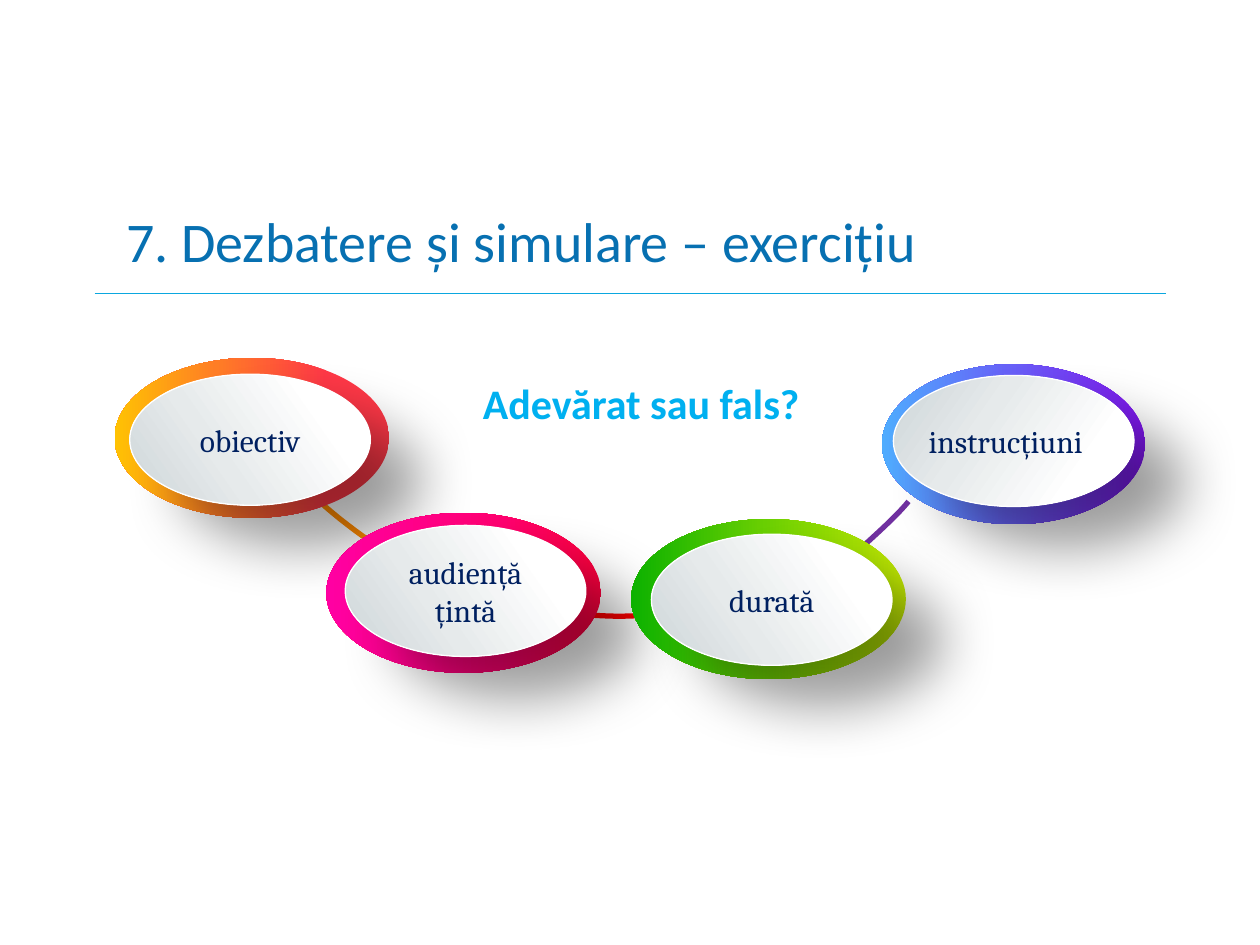
from typing import NamedTuple

from lxml import etree
from pptx import Presentation
from pptx.dml.color import RGBColor
from pptx.enum import shapes as kinds, text as tx
from pptx.oxml import ns
from pptx.util import Inches, Pt

MID = tx.MSO_ANCHOR.MIDDLE
LEFT, MIDST = tx.PP_ALIGN.LEFT, tx.PP_ALIGN.CENTER
Stops = list[tuple[int, str]]
Point = tuple[float, float]

PALE: Stops = [(0, "FFFFFF"), (23, "FFFFFF"), (63, "E6EAEB"), (100, "CDD5D8")]
PALE_LEFT: Stops = [(0, "CDD5D8"), (37, "E6EAEB"), (77, "FFFFFF"), (100, "FFFFFF")]
FACE = (1.91, 1.04)


class Badge(NamedTuple):
    label: str
    ring: tuple[float, float, float, float]
    face: Point
    hues: Stops
    tone: Stops = PALE
    turn: int = 0
    flip: bool = True
    align: tx.PP_ALIGN = MIDST


class Arc(NamedTuple):
    color: str
    start: Point
    curves: list[tuple[Point, Point, Point]]


BADGES = [
    Badge("instrucțiuni", (7, 2.89, 2.09, 1.27), (7.09, 2.98),
          [(0, "8016EF"), (52, "6761F7"), (100, "4FACFE")],
          PALE_LEFT, 180, False, LEFT),
    Badge("obiectiv", (0.91, 2.84, 2.18, 1.27), (1.03, 2.97),
          [(0, "FF3847"), (23, "FF3847"), (63, "FF7D25"), (100, "FFC203")]),
    Badge("audiență țintă", (2.59, 4.07, 2.18, 1.27), (2.74, 4.17),
          [(0, "FF0040"), (2, "FF0040"), (37, "FF0071"), (100, "FF00A2")]),
    Badge("durată", (5.01, 4.12, 2.18, 1.27), (5.17, 4.24),
          [(1, "C3EA03"), (53, "67CE02"), (100, "0CB100")]),
]

ARCS = [
    Arc("7030A0", (7.21, 3.98), [((7.17, 4.03), (7.13, 4.07), (7.09, 4.11)),
                                 ((6.96, 4.24), (6.82, 4.36), (6.69, 4.48))]),
    Arc("7030A0", (6.69, 4.47), [((6.5, 4.6), (6.31, 4.7), (6.11, 4.77))]),
    Arc("FF0000", (4.49, 4.86), [((4.71, 4.89), (4.93, 4.9), (5.15, 4.88)),
                                 ((5.26, 4.87), (5.37, 4.86), (5.48, 4.85))]),
    Arc("FF8A00", (2.47, 3.92), [((2.68, 4.12), (2.94, 4.31), (3.22, 4.48))]),
]


def rgb(code: str) -> RGBColor:
    return RGBColor.from_string(code)


def add(node, tag: str, **attrs):
    """Append a DrawingML child element."""
    return etree.SubElement(node, ns.qn(tag),
                            {key: str(val) for key, val in attrs.items()})


def stroke(line, color: str, width: float) -> None:
    line.color.rgb = rgb(color)
    line.width = Pt(width)


def write(frame, words: str, color: str, align, **form) -> None:
    frame.word_wrap = True
    para = frame.paragraphs[0]
    para.alignment = align
    run = para.add_run()
    run.text = words
    run.font.color.rgb = rgb(color)
    for key, val in form.items():
        setattr(run.font, key, val)


def shade(shape, stops: Stops, angle: int) -> None:
    """Fill with a linear gradient; angle runs clockwise."""
    shape.fill.gradient()
    shape.fill.gradient_angle = -angle % 360
    bands = shape._element.spPr.find(".//" + ns.qn("a:gsLst"))
    for old in list(bands):
        bands.remove(old)
    for place, color in stops:
        add(add(bands, "a:gs", pos=place * 1000), "a:srgbClr", val=color)


def oval(slide, box, stops: Stops, angle: int, flip: bool):
    shape = slide.shapes.add_shape(kinds.MSO_SHAPE.OVAL, *map(Inches, box))
    shape.shadow.inherit = False
    shade(shape, stops, angle)
    if flip:
        shape._element.spPr.xfrm.set("flipH", "1")
    return shape


def cast(shape) -> None:
    """Drop a soft shadow to the lower right."""
    effects = shape._element.spPr.find(ns.qn("a:effectLst"))
    drop = add(effects, "a:outerShdw", blurRad=Pt(33), dist=Pt(36.7),
               dir=39 * 60000, algn="ctr", rotWithShape=0)
    add(add(drop, "a:srgbClr", val="000000"), "a:alpha", val=38000)


def draw_badge(slide, badge: Badge) -> None:
    ring = oval(slide, badge.ring, badge.hues, badge.turn, badge.flip)
    ring.line.fill.background()
    face = oval(slide, badge.face + FACE, badge.tone, 35, badge.flip)
    stroke(face.line, "FFFFFF", 0.75)
    cast(face)
    frame = face.text_frame
    for side in ("left", "top", "right", "bottom"):
        setattr(frame, "margin_" + side, 0)
    frame.vertical_anchor = MID
    write(frame, badge.label, "002060", badge.align, name="Cambria", size=Pt(18))


def draw_arc(slide, arc: Arc, steps: int = 12) -> None:
    """Trace the Bezier curves with short segments."""
    points, last = [], arc.start
    for one, two, end in arc.curves:
        for step in range(1, steps + 1):
            t = step / steps
            s = 1 - t
            points.append(tuple(
                Inches(s**3 * a + 3 * s * s * t * b + 3 * s * t * t * c + t**3 * d)
                for a, b, c, d in zip(last, one, two, end)))
        last = end
    path = slide.shapes.build_freeform(*map(Inches, arc.start))
    path.add_line_segments(points, close=False)
    shape = path.convert_to_shape()
    shape.shadow.inherit = False
    shape.fill.background()
    stroke(shape.line, arc.color, 3)


def main() -> None:
    deck = Presentation()
    deck.slide_width, deck.slide_height = Inches(10), Inches(7.5)
    slide = deck.slides.add_slide(deck.slide_layouts[5])

    # Title and rule
    title = slide.shapes.title
    title.left, title.top, title.width, title.height = map(
        Inches, (0.9, 1.53, 8.5, 0.75))
    title.text_frame.vertical_anchor = MID
    write(title.text_frame, "7. Dezbatere și simulare – exercițiu", "0770B1",
          LEFT, name="Calibri", size=Pt(32))
    rule = slide.shapes.add_connector(
        kinds.MSO_CONNECTOR.STRAIGHT, *map(Inches, (0.75, 2.33, 9.25, 2.33)))
    stroke(rule.line, "0BA7DF", 0.75)
    add(rule._element.spPr, "a:effectLst")

    # Chain of badges
    for arc in ARCS:
        draw_arc(slide, arc)
    for badge in BADGES:
        draw_badge(slide, badge)

    # Question
    box = slide.shapes.add_textbox(*map(Inches, (3.18, 2.89, 3.82, 0.57)))
    write(box.text_frame, "Adevărat sau fals?", "00B0F0", MIDST,
          name="Calibri", size=Pt(24), bold=True)
    para = box.text_frame.paragraphs[0]
    para.line_spacing, para.space_after = 1.15, Pt(6)

    deck.save("out.pptx")


if __name__ == "__main__":
    main()
